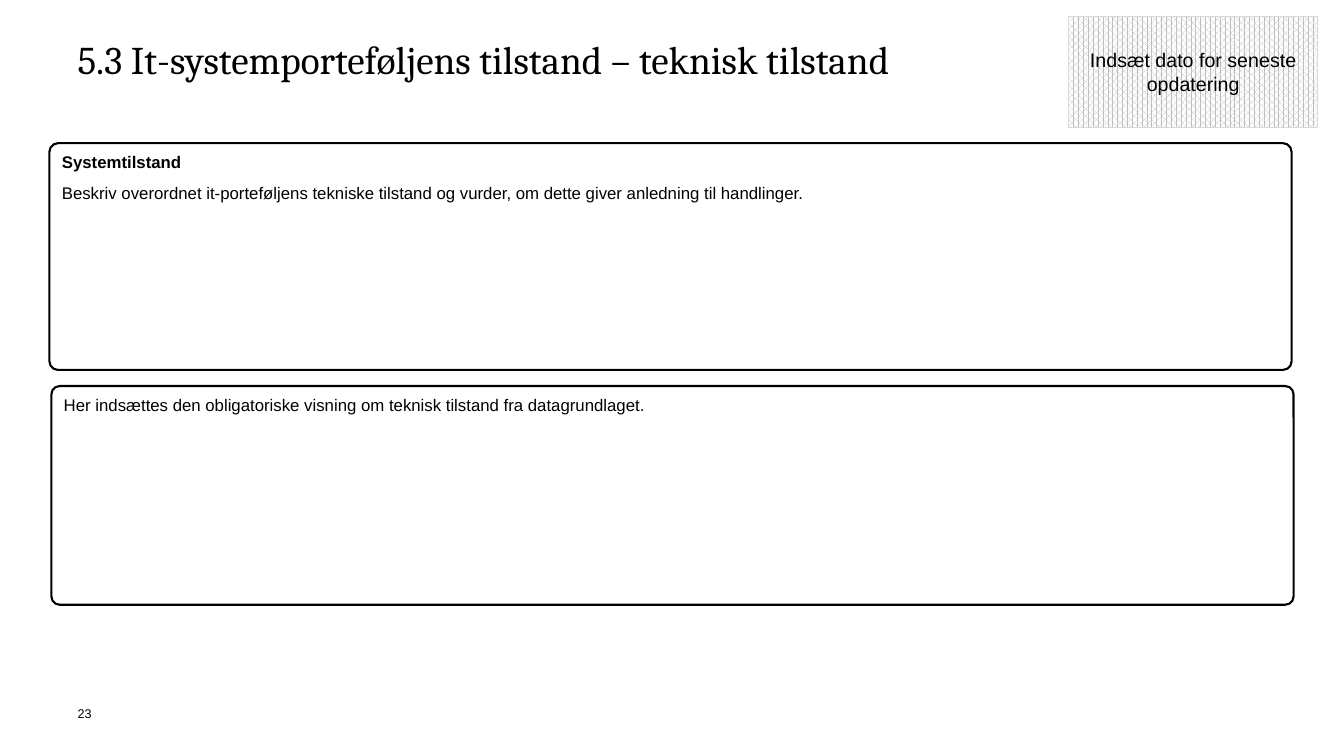
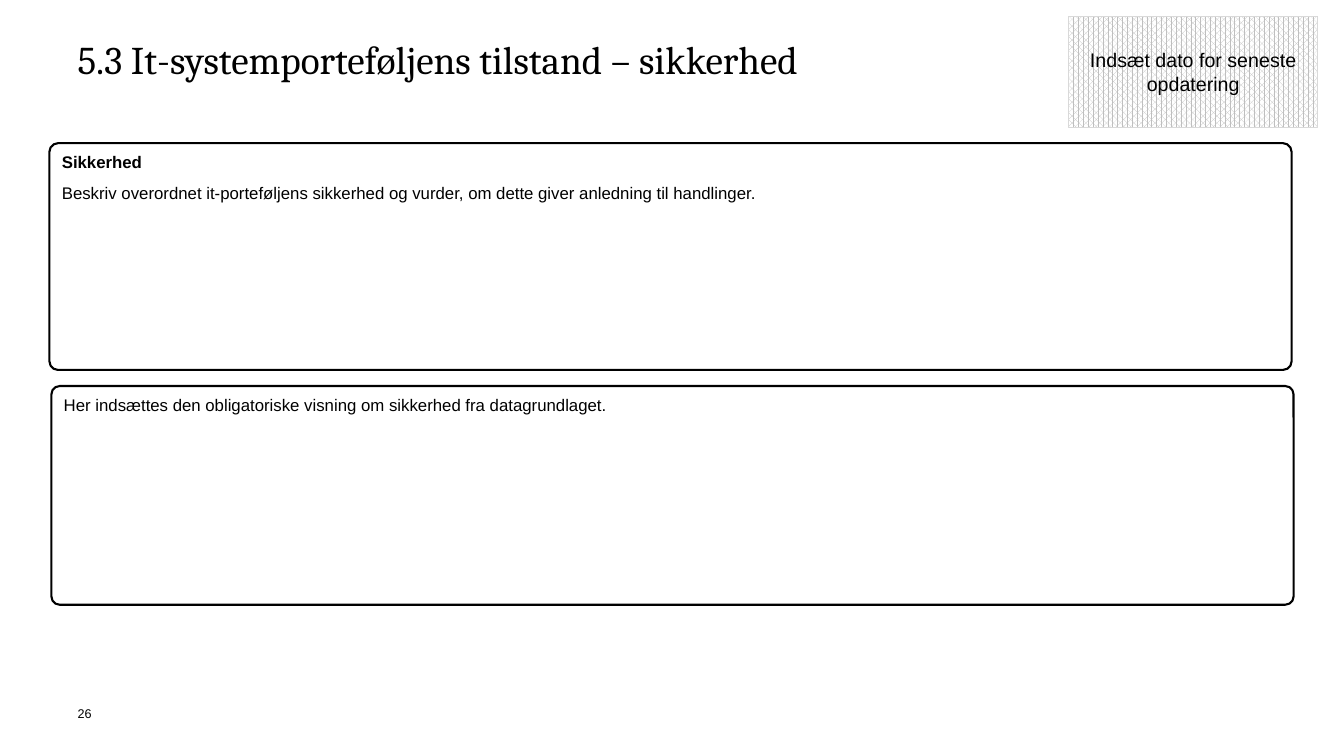
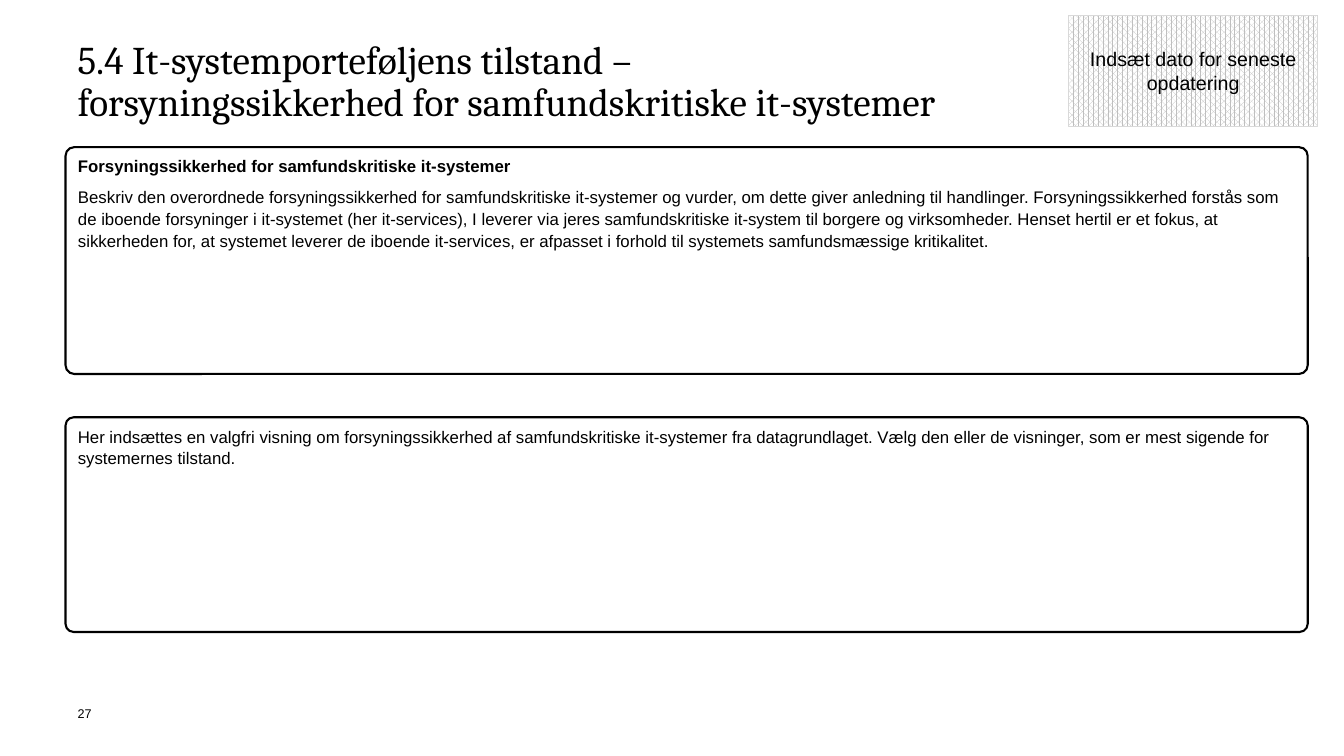
from dataclasses import dataclass

from pptx import Presentation
from pptx.dml.color import RGBColor
from pptx.enum.dml import MSO_PATTERN
from pptx.enum.shapes import MSO_SHAPE
from pptx.enum.text import MSO_ANCHOR, PP_ALIGN
from pptx.util import Inches, Pt

SLIDES = [
    {
        "number": "23",
        "title": "5.3 It-systemporteføljens tilstand – teknisk tilstand",
        "heading": "Systemtilstand",
        "guidance": "Beskriv overordnet it-porteføljens tekniske tilstand og vurder, "
                    "om dette giver anledning til handlinger.",
        "view": "Her indsættes den obligatoriske visning om teknisk tilstand fra datagrundlaget.",
        "layout": "standard",
    },
    {
        "number": "26",
        "title": "5.3 It-systemporteføljens tilstand – sikkerhed",
        "heading": "Sikkerhed",
        "guidance": "Beskriv overordnet it-porteføljens sikkerhed og vurder, "
                    "om dette giver anledning til handlinger.",
        "view": "Her indsættes den obligatoriske visning om sikkerhed fra datagrundlaget.",
        "layout": "standard",
    },
    {
        "number": "27",
        "title": "5.4 It-systemporteføljens tilstand –\v"
                 "forsyningssikkerhed for samfundskritiske it-systemer",
        "heading": "Forsyningssikkerhed for samfundskritiske it-systemer",
        "guidance": "Beskriv den overordnede forsyningssikkerhed for samfundskritiske it-systemer "
                    "og vurder, om dette giver anledning til handlinger. Forsyningssikkerhed forstås "
                    "som de iboende forsyninger i it-systemet (her it-services), I leverer via jeres "
                    "samfundskritiske it-system til borgere og virksomheder. Henset hertil er et "
                    "fokus, at sikkerheden for, at systemet leverer de iboende it-services, er "
                    "afpasset i forhold til systemets samfundsmæssige kritikalitet.",
        "view": "Her indsættes en valgfri visning om forsyningssikkerhed af samfundskritiske "
                "it-systemer fra datagrundlaget. Vælg den eller de visninger, som er mest sigende "
                "for systemernes tilstand.",
        "layout": "two_line_title",
    },
]
DATE_NOTE = "Indsæt dato for seneste opdatering"

LAYOUTS = {
    "standard": {
        "description": (0.49, 1.42, 12.32, 2.25),
        "view": (0.51, 3.83, 12.32, 2.17),
        "date": (10.6, 0.16, 2.47, 1.1),
    },
    "two_line_title": {
        "description": (0.65, 1.46, 12.32, 2.25),
        "view": (0.65, 4.14, 12.32, 2.13),
        "date": (10.6, 0.15, 2.47, 1.1),
    },
}
TITLE_AREA = (0.77, 0.4, 11.8, 1.02)
NUMBER_AREA = (0.77, 7, 0.31, 0.3)


@dataclass(frozen=True)
class Theme:
    ink: RGBColor = RGBColor(0, 0, 0)
    paper: RGBColor = RGBColor(255, 255, 255)
    hatch: RGBColor = RGBColor(0xBF, 0xBF, 0xBF)
    date_border: RGBColor = RGBColor(0xD9, 0xD9, 0xD9)
    serif: str = "Cambria"
    sans: str = "Arial"
    title: Pt = Pt(28)
    date: Pt = Pt(14)
    body: Pt = Pt(12)
    number: Pt = Pt(9)
    panel_border: Pt = Pt(1.5)
    thin_border: Pt = Pt(0.5)
    paragraph_gap: Pt = Pt(6.5)
    corner: float = 0.038


THEME = Theme()


def apply(target, formats):
    for attribute, value in formats.items():
        setattr(target, attribute, value)


def write(holder, paragraphs, size, font=THEME.sans, align=PP_ALIGN.LEFT,
          anchor=MSO_ANCHOR.TOP, spacing=1.0, margins=(0.1, 0.05)):
    side, edge = (Inches(margin) for margin in margins)
    frame = holder.text_frame
    apply(frame, {"word_wrap": True, "vertical_anchor": anchor,
                  "margin_left": side, "margin_right": side,
                  "margin_top": edge, "margin_bottom": edge})
    for index, (text, bold) in enumerate(paragraphs):
        paragraph = frame.add_paragraph() if index else frame.paragraphs[0]
        paragraph.text = text
        apply(paragraph, {"alignment": align, "line_spacing": spacing})
        if index:
            paragraph.space_before = THEME.paragraph_gap
        for run in paragraph.runs:
            apply(run.font, {"name": font, "size": size, "bold": bold})
            run.font.color.rgb = THEME.ink


def add_label(slide, area, text, size, **style):
    label = slide.shapes.add_textbox(*map(Inches, area))
    write(label, [(text, False)], size, margins=(0, 0), **style)


def add_frame(slide, preset, area, border_color, border_width):
    frame = slide.shapes.add_shape(preset, *map(Inches, area))
    frame.shadow.inherit = False
    frame.line.color.rgb = border_color
    frame.line.width = border_width
    return frame


def add_panel(slide, area, paragraphs):
    panel = add_frame(slide, MSO_SHAPE.ROUNDED_RECTANGLE, area, THEME.ink, THEME.panel_border)
    panel.adjustments[0] = THEME.corner
    panel.fill.background()
    write(panel, paragraphs, THEME.body, spacing=1.08)


def add_date_box(slide, area):
    date_box = add_frame(slide, MSO_SHAPE.RECTANGLE, area, THEME.date_border, THEME.thin_border)
    date_box.fill.patterned()
    date_box.fill.pattern = MSO_PATTERN.PERCENT_70
    date_box.fill.fore_color.rgb = THEME.hatch
    date_box.fill.back_color.rgb = THEME.paper
    write(date_box, [(DATE_NOTE, False)], THEME.date,
          align=PP_ALIGN.CENTER, anchor=MSO_ANCHOR.MIDDLE)


def build_slide(deck, content):
    slide = deck.slides.add_slide(deck.slide_layouts[6])
    areas = LAYOUTS[content["layout"]]
    add_label(slide, NUMBER_AREA, content["number"], THEME.number)
    add_label(slide, TITLE_AREA, content["title"], THEME.title, font=THEME.serif, spacing=0.9)
    add_panel(slide, areas["description"],
              [(content["heading"], True), (content["guidance"], False)])
    add_panel(slide, areas["view"], [(content["view"], False)])
    add_date_box(slide, areas["date"])


def main():
    deck = Presentation()
    apply(deck, {"slide_width": Inches(13.33), "slide_height": Inches(7.5)})
    for content in SLIDES:
        build_slide(deck, content)
    deck.save("out.pptx")


if __name__ == "__main__":
    main()
